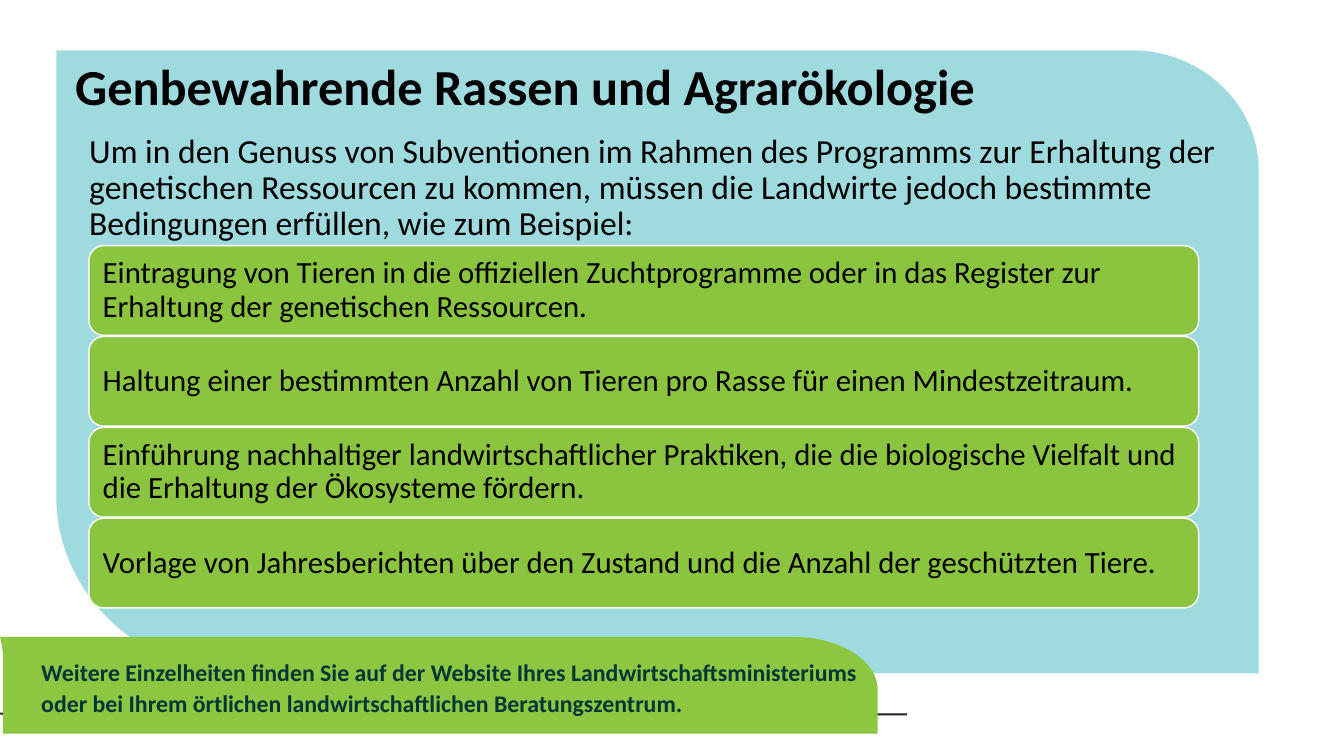
from dataclasses import dataclass

from pptx import Presentation
from pptx.dml.color import RGBColor
from pptx.enum import shapes, text
from pptx.oxml import ns
from pptx.util import Cm, Pt


@dataclass(frozen=True)
class Theme:
    font: str = "Calibri"
    black: str = "000000"
    white: str = "FFFFFF"
    rule: str = "231F20"
    panel: str = "9FDADF"
    banner: str = "8DC641"
    card: str = "8BC540"
    note: str = "043637"
    title_size: int = 36
    intro_size: int = 24
    card_size: int = 22
    note_size: int = 17


THEME = Theme()

RULE_OUTLINE = [
    (22.86, 18.03), (11.25, 18.03),
    (11.2, 18.03, 7.11, 17.98, 5.66, 17.96),
    (3.94, 17.91, 1.32, 17.98, 0.36, 17.98),
    (0.15, 18.01, 0.03, 18.01, 0, 18.01),
    (0, 17.96),
    (0.03, 17.96, 0.15, 17.96, 0.36, 17.96),
    (1.32, 17.93, 3.94, 17.88, 5.66, 17.91),
    (7.14, 17.96, 11.2, 17.98, 11.25, 17.98),
    (22.86, 17.98),
]
PANEL_OUTLINE = [
    (1.42, 1.27), (28.52, 1.27),
    (30.28, 1.27, 31.72, 2.62, 31.72, 4.29),
    (31.72, 16.97), (6.15, 16.97),
    (3.53, 16.97, 1.42, 14.96, 1.42, 12.5),
]
BANNER_OUTLINE = [
    (0, 16.05), (20.02, 16.05),
    (21.16, 16.05, 22.12, 16.66, 22.12, 17.37),
    (22.12, 18.49), (0.08, 18.49), (0.08, 16.54),
    (0.08, 16.43, 0.05, 16.34, 0.05, 16.26),
]

TITLE = "Genbewahrende Rassen und Agrarökologie"
INTRO = (
    "Um in den Genuss von Subventionen im Rahmen des Programms zur Erhaltung der "
    "genetischen Ressourcen zu kommen, müssen die Landwirte jedoch bestimmte "
    "Bedingungen erfüllen, wie zum Beispiel:"
)
CONDITIONS = [
    "Eintragung von Tieren in die offiziellen Zuchtprogramme oder in das Register zur "
    "Erhaltung der genetischen Ressourcen.",
    "Haltung einer bestimmten Anzahl von Tieren pro Rasse für einen Mindestzeitraum.",
    "Einführung nachhaltiger landwirtschaftlicher Praktiken, die die biologische Vielfalt "
    "und die Erhaltung der Ökosysteme fördern.",
    "Vorlage von Jahresberichten über den Zustand und die Anzahl der geschützten Tiere.",
]
NOTE = (
    "Weitere Einzelheiten finden Sie auf der Website Ihres Landwirtschaftsministeriums "
    "oder bei Ihrem örtlichen landwirtschaftlichen Beratungszentrum."
)


def color(value):
    return RGBColor.from_string(value)


def paint(shape, fill):
    shape.shadow.inherit = False
    shape.fill.solid()
    shape.fill.fore_color.rgb = color(fill)


def bend(shape, segments):
    lines = iter(list(shape.element.iter(ns.qn("a:lnTo"))))
    for segment in segments:
        first = next(lines)
        if len(segment) == 6:
            first.tag = ns.qn("a:cubicBezTo")
            for line in (next(lines), next(lines)):
                first.append(line[0])
                line.getparent().remove(line)


def add_outline(slide, outline, fill):
    vertices = [(Cm(segment[i]), Cm(segment[i + 1]))
                for segment in outline for i in range(0, len(segment), 2)]
    builder = slide.shapes.build_freeform(*vertices[0])
    builder.add_line_segments(vertices[1:], close=True)
    shape = builder.convert_to_shape()
    bend(shape, outline[1:])
    paint(shape, fill)
    shape.line.fill.background()


def write(shape, content, size, ink=THEME.black, bold=False, spacing=0.9, indent=0,
          anchor=text.MSO_ANCHOR.TOP):
    frame = shape.text_frame
    frame.text = content
    frame.word_wrap = True
    frame.auto_size = text.MSO_AUTO_SIZE.NONE
    frame.vertical_anchor = anchor
    paragraph = frame.paragraphs[0]
    if indent:
        paragraph._p.get_or_add_pPr().set("marL", str(Cm(indent)))
    paragraph.alignment = text.PP_ALIGN.LEFT
    paragraph.line_spacing = spacing
    paragraph.space_before = Pt(0)
    paragraph.font.name = THEME.font
    paragraph.font.size = Pt(size)
    paragraph.font.bold = bold
    paragraph.font.color.rgb = color(ink)


def place_title(slide):
    title = slide.shapes.title
    title.left, title.top, title.width, title.height = Cm(1.64), Cm(1.44), Cm(29.67), Cm(2.77)
    write(title, TITLE, THEME.title_size, bold=True)
    title.element.getparent().append(title.element)


def add_text(slide, left, top, width, height, content, size, **style):
    box = slide.shapes.add_textbox(Cm(left), Cm(top), Cm(width), Cm(height))
    write(box, content, size, **style)


def add_card(slide, top, content):
    card = slide.shapes.add_shape(
        shapes.MSO_SHAPE.ROUNDED_RECTANGLE, Cm(2.24), Cm(top), Cm(27.97), Cm(2.26))
    paint(card, THEME.card)
    card.line.color.rgb = color(THEME.white)
    card.line.width = Pt(1)
    frame = card.text_frame
    frame.margin_left = frame.margin_right = Cm(0.24)
    frame.margin_top = frame.margin_bottom = Cm(0.24)
    write(card, content, THEME.card_size, anchor=text.MSO_ANCHOR.MIDDLE)


def main():
    presentation = Presentation()
    presentation.slide_width, presentation.slide_height = Cm(33.87), Cm(19.05)
    slide = presentation.slides.add_slide(presentation.slide_layouts[5])
    add_outline(slide, RULE_OUTLINE, THEME.rule)
    add_outline(slide, PANEL_OUTLINE, THEME.panel)
    add_outline(slide, BANNER_OUTLINE, THEME.banner)
    add_text(slide, 1.36, 3.26, 29.95, 9.14, INTRO, THEME.intro_size, indent=0.64)
    place_title(slide)
    for index, condition in enumerate(CONDITIONS):
        add_card(slide, 6.19 + 2.29 * index, condition)
    add_text(slide, 0.79, 16.41, 21.82, 1.78, NOTE, THEME.note_size,
             ink=THEME.note, bold=True, spacing=1.07)
    presentation.save("out.pptx")


if __name__ == "__main__":
    main()
